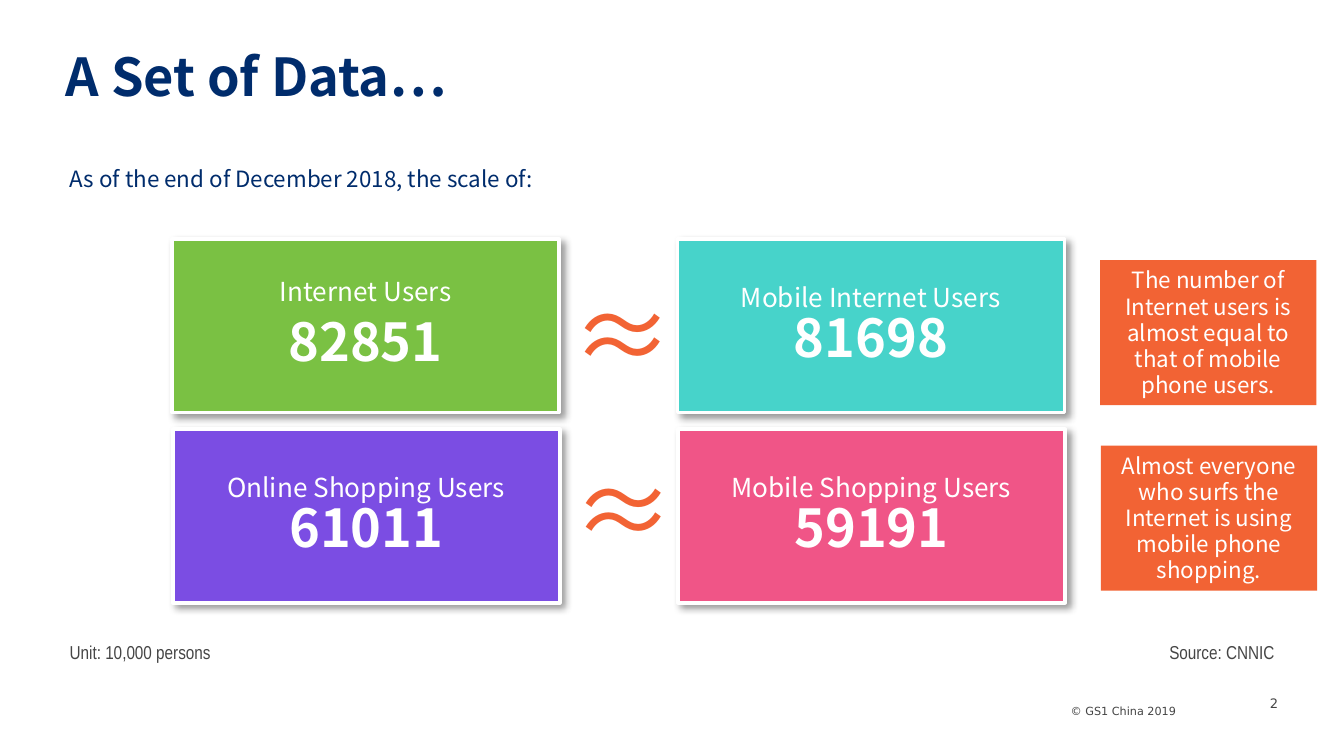
from lxml.etree import SubElement
from pptx import Presentation
from pptx.dml.color import RGBColor
from pptx.enum.shapes import MSO_SHAPE as Shape
from pptx.enum.text import MSO_ANCHOR as Anchor, MSO_AUTO_SIZE as AutoSize, PP_ALIGN as Align
from pptx.oxml.ns import qn
from pptx.util import Emu, Pt

PX = 4572
SANS, NARROW, SMALL = "Noto Sans CJK SC", "Arial Narrow", "DejaVu Sans"
COLORS = {
    "navy": "002C6C", "grey": "454545", "white": "FFFFFF", "black": "000000",
    "green": "7AC143", "teal": "47D3CA", "purple": "7B4DE3", "pink": "F05587",
    "orange": "F26334",
}
ROWS = [
    {"box": (256, 356), "wave_drop": 40, "note_drop": 31,
     "cards": [("Internet Users", "82851", "green", 0.9),
               ("Mobile Internet Users", "81698", "teal", Pt(16))],
     "note": "The number of Internet users is almost equal to that of mobile phone users."},
    {"box": (257, 639), "wave_drop": 18, "note_drop": 24,
     "cards": [("Online Shopping Users", "61011", "purple", Pt(16)),
               ("Mobile Shopping Users", "59191", "pink", Pt(16))],
     "note": "Almost everyone who surfs the Internet is using mobile phone shopping."},
]


def px(*lengths):
    """Turn px lengths into EMU."""
    return [Emu(length * PX) for length in lengths]


def rgb(name):
    """Look up a named colour."""
    return RGBColor.from_string(COLORS[name])


def style(para, text, size, color, font=SANS, bold=False, align=Align.LEFT):
    """Fill one paragraph and set its look."""
    para.text = text
    para.alignment = align
    para.font.name, para.font.size, para.font.bold = font, Pt(size), bold
    para.font.color.rgb = rgb(color)


def set_frame(frame, insets=(20, 10, 20, 10), anchor=Anchor.TOP, wrap=True):
    """Set insets, anchor and wrapping of a text frame."""
    (frame.margin_left, frame.margin_top,
     frame.margin_right, frame.margin_bottom) = px(*insets)
    frame.vertical_anchor, frame.word_wrap = anchor, wrap
    frame.auto_size = AutoSize.NONE


def add_label(page, box, text, size, color, font=SANS, bold=False, align=Align.LEFT, **frame_options):
    """Add a one-paragraph text box."""
    frame = page.shapes.add_textbox(*px(*box)).text_frame
    set_frame(frame, **frame_options)
    style(frame.paragraphs[0], text, size, color, font, bold, align)


def add_panel(page, box, color):
    """Add a plain filled rectangle."""
    panel = page.shapes.add_shape(Shape.RECTANGLE, *px(*box))
    panel.shadow.inherit = False
    panel.fill.solid()
    panel.fill.fore_color.rgb = rgb(color)
    panel.line.fill.background()
    return panel


def add_shadow(shape):
    """Give a shape a soft shadow to the lower right."""
    effects = shape._element.spPr.find(qn("a:effectLst"))
    shadow = SubElement(effects, qn("a:outerShdw"), blurRad=str(Pt(4)), dist=str(Pt(3)),
                        dir="2700000", algn="tl", rotWithShape="0")
    tint = SubElement(shadow, qn("a:srgbClr"), val=COLORS["black"])
    SubElement(tint, qn("a:alpha"), val="40000")


def add_card(page, box, label, number, color, label_spacing):
    """Add a bordered card with a label over a large number."""
    card = add_panel(page, box, color)
    card.line.color.rgb, card.line.width = rgb("white"), Pt(2)
    add_shadow(card)
    frame = card.text_frame
    set_frame(frame, insets=(12, 12, 12, 12), anchor=Anchor.MIDDLE)
    heading, figure = frame.paragraphs[0], frame.add_paragraph()
    style(heading, label, 14, "white", align=Align.CENTER)
    style(figure, number, 28, "white", bold=True, align=Align.CENTER)
    heading.line_spacing, figure.line_spacing = label_spacing, 0.9
    heading.space_after = Pt(5 if label_spacing == 0.9 else 0)
    figure.space_after = Pt(10)


def add_note(page, box, text):
    """Add an orange remark."""
    note = add_panel(page, box, "orange")
    set_frame(note.text_frame, anchor=Anchor.MIDDLE)
    para = note.text_frame.paragraphs[0]
    style(para, text, 12, "white", align=Align.CENTER)
    para.line_spacing = Pt(14)


def add_row(page, row):
    """Add two compared cards, the sign between them and a remark."""
    left, top = row["box"]
    for column, card in enumerate(row["cards"]):
        add_card(page, (left + 752 * column, top, 576, 258), *card)
    add_label(page, (left + 577, top + row["wave_drop"], 216, 202), "≈", 54, "orange")
    add_note(page, (left + 1381, top + row["note_drop"], 322, 216), row["note"])


def add_header(page, left, top):
    """Add the title and the introductory line."""
    add_label(page, (left + 14, top, 1902, 148), "A Set of Data…", 28, "navy", bold=True,
              insets=(0, 10, 20, 10), anchor=Anchor.MIDDLE)
    add_label(page, (left, top + 198, 770, 60), "As of the end of December 2018, the scale of:",
              12, "navy", wrap=False)


def add_footer(page, left, top):
    """Add the unit, the source, the copyright line and the page number."""
    add_label(page, (left, top, 250, 54), "Unit: 10,000 persons", 10, "grey", NARROW, wrap=False)
    add_label(page, (left + 1216, top, 616, 54), "Source: CNNIC", 10, "grey", NARROW,
              align=Align.RIGHT)
    add_label(page, (left + 1060, top + 104, 606, 22), "© GS1 China 2019", 6, "grey", SMALL,
              align=Align.RIGHT, insets=(0, 0, 0, 0))
    add_label(page, (left + 1764, top + 86, 54, 32), "2", 7, "grey", SMALL,
              align=Align.RIGHT, insets=(0, 0, 0, 0), anchor=Anchor.MIDDLE)


def main():
    """Build and save the deck."""
    deck = Presentation()
    deck.slide_width, deck.slide_height = px(2000, 1125)
    page = deck.slides.add_slide(deck.slide_layouts[6])
    add_header(page, 84, 38)
    for row in ROWS:
        add_row(page, row)
    add_footer(page, 84, 944)
    deck.save("out.pptx")


if __name__ == "__main__":
    main()
